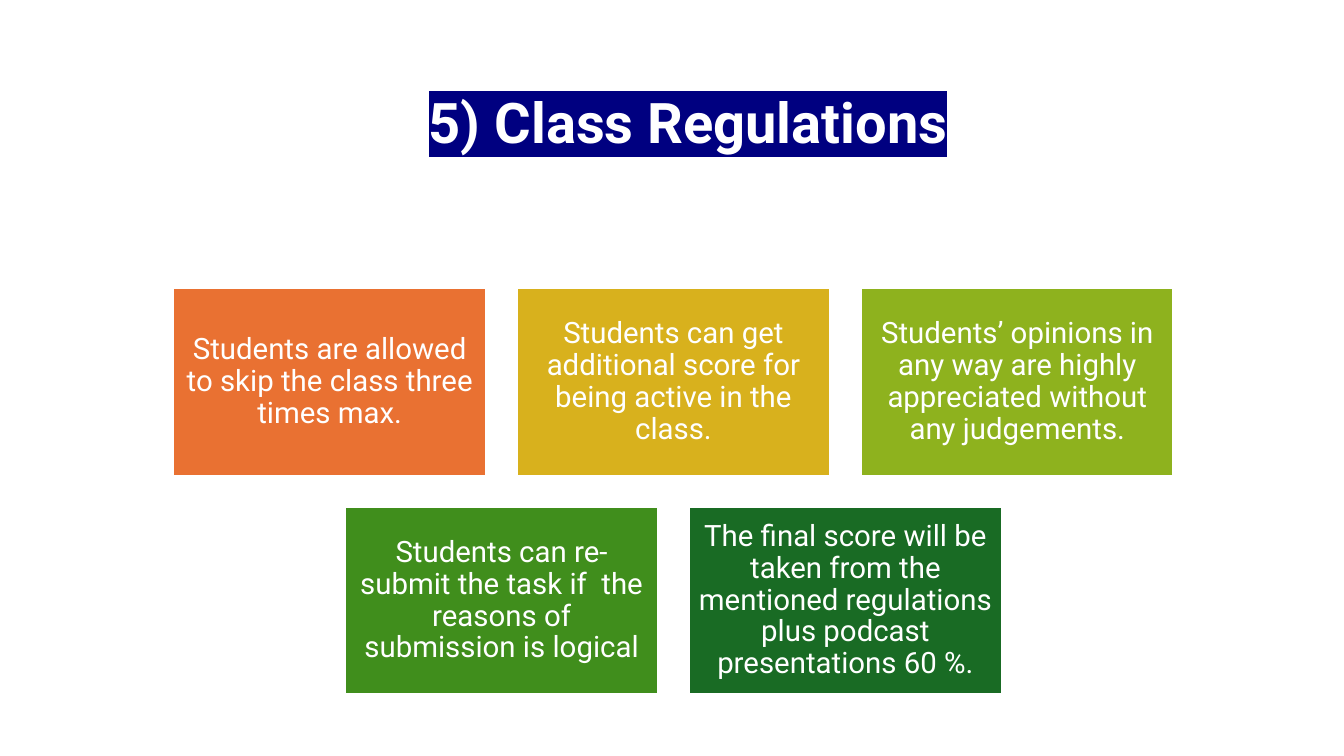
from dataclasses import dataclass

from lxml import etree
from pptx import Presentation
from pptx import util as u
from pptx.dml.color import RGBColor
from pptx.enum import shapes, text
from pptx.oxml import ns

FONT = "Roboto"
COLOURS = {
    "white": "FFFFFF",
    "navy": "000080",
    "orange": "E97132",
    "gold": "D8B11D",
    "lime": "8EB21E",
    "green": "408E1C",
    "forest": "196B24",
}

# Card grid, in inches
GRID_CENTRE, GRID_TOP = 6.68, 2.86
CARD_WIDTH, CARD_HEIGHT = 3.1, 1.86
COLUMN_STEP, ROW_STEP = 3.41, 2.17
CARD_INSET = 0.09


@dataclass
class Card:
    wording: str
    colour: str


CARD_ROWS = [
    [
        Card("Students are allowed to skip the class three times max.", "orange"),
        Card("Students can get additional score for being active in the class.", "gold"),
        Card("Students’ opinions in any way are highly appreciated without any judgements.", "lime"),
    ],
    [
        Card("Students can re-submit the task if  the reasons of submission is logical", "green"),
        Card("The final score will be taken from the mentioned regulations "
             "plus podcast presentations 60 %.", "forest"),
    ],
]


def rgb(name: str) -> RGBColor:
    return RGBColor.from_string(COLOURS[name])


def write(shape, wording: str, size: float, bold: bool = False):
    """Put centred white text in a shape and return its run."""
    frame = shape.text_frame
    frame.word_wrap = True
    frame.vertical_anchor = text.MSO_ANCHOR.MIDDLE
    paragraph = frame.paragraphs[0]
    paragraph.alignment = text.PP_ALIGN.CENTER
    paragraph.line_spacing = 0.9
    run = paragraph.add_run()
    run.text = wording
    run.font.name = FONT
    run.font.size = u.Pt(size)
    run.font.bold = bold
    run.font.color.rgb = rgb("white")
    return run


def highlight(run, colour: str) -> None:
    """Add a text highlight, which must follow the run's fill."""
    mark = etree.Element(ns.qn("a:highlight"))
    etree.SubElement(mark, ns.qn("a:srgbClr"), val=COLOURS[colour])
    run.font._element.find(ns.qn("a:solidFill")).addnext(mark)


def add_title(slide, wording: str) -> None:
    title = slide.shapes.add_textbox(u.Inches(1.51), u.Inches(0.38), u.Inches(10.63), u.Inches(1.72))
    highlight(write(title, wording, 40, bold=True), "navy")


def add_card(slide, card: Card, left: float, top: float) -> None:
    shape = slide.shapes.add_shape(
        shapes.MSO_SHAPE.RECTANGLE,
        u.Inches(left), u.Inches(top), u.Inches(CARD_WIDTH), u.Inches(CARD_HEIGHT),
    )
    shape.shadow.inherit = False
    shape.fill.solid()
    shape.fill.fore_color.rgb = rgb(card.colour)
    shape.line.color.rgb = rgb("white")
    shape.line.width = u.Pt(1.5)
    frame = shape.text_frame
    frame.margin_left = frame.margin_right = u.Inches(CARD_INSET)
    frame.margin_top = frame.margin_bottom = u.Inches(CARD_INSET)
    write(shape, card.wording, 21)


def main() -> None:
    presentation = Presentation()
    presentation.slide_width = u.Inches(13.33)
    presentation.slide_height = u.Inches(7.5)
    slide = presentation.slides.add_slide(presentation.slide_layouts[6])

    # Title
    add_title(slide, "5) Class Regulations")

    # Regulation cards, each row centred on the grid
    for row, cards in enumerate(CARD_ROWS):
        row_width = (len(cards) - 1) * COLUMN_STEP + CARD_WIDTH
        row_left = GRID_CENTRE - row_width / 2
        for column, card in enumerate(cards):
            add_card(slide, card, row_left + column * COLUMN_STEP, GRID_TOP + row * ROW_STEP)

    presentation.save("out.pptx")


if __name__ == "__main__":
    main()
